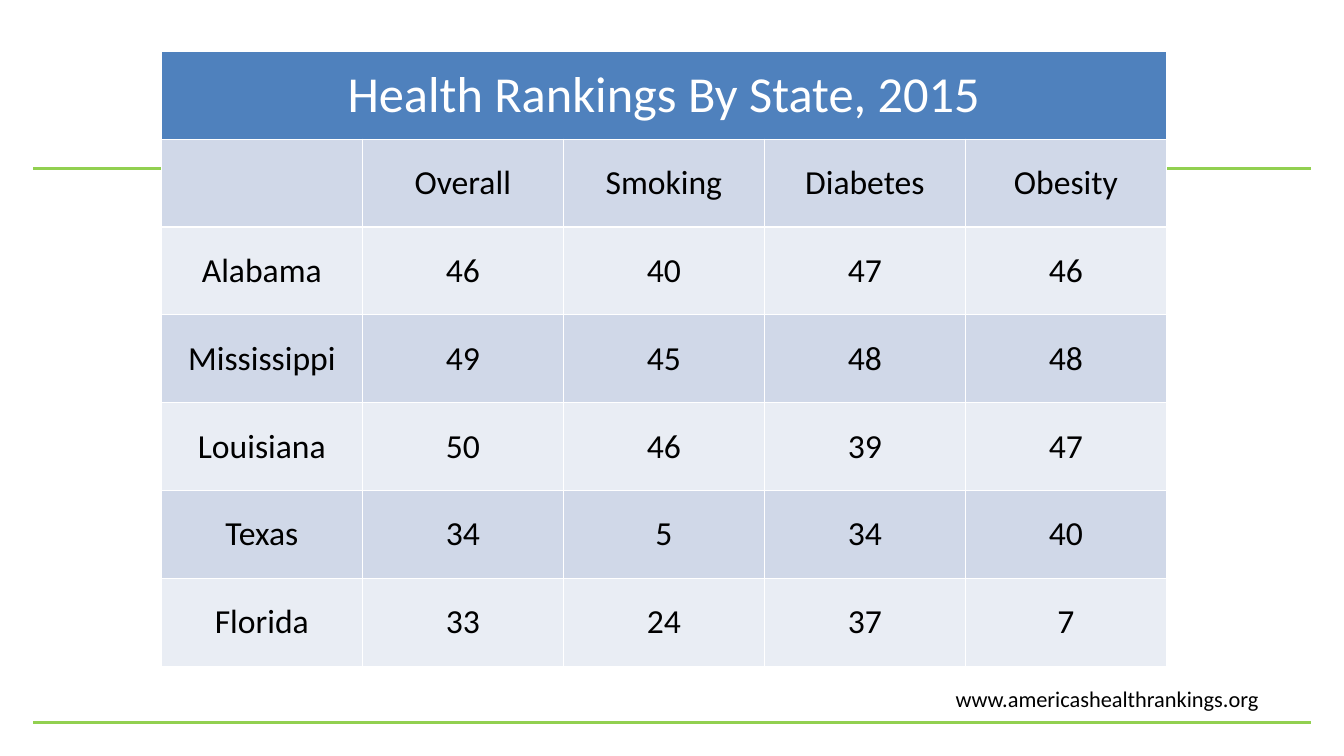
from lxml.etree import SubElement
from pptx import Presentation
from pptx.dml.color import RGBColor
from pptx.enum.shapes import MSO_CONNECTOR
from pptx.enum.text import MSO_ANCHOR, PP_ALIGN
from pptx.oxml.ns import qn
from pptx.util import Inches, Pt

COLORS = {
    "rule": "92D050",
    "title": "4F81BD",
    "dark_band": "D0D8E8",
    "light_band": "E9EDF4",
    "white": "FFFFFF",
    "black": "000000",
}
FONT = "Calibri"
TITLE = "Health Rankings By State, 2015"
RANKINGS = [
    ["", "Overall", "Smoking", "Diabetes", "Obesity"],
    ["Alabama", 46, 40, 47, 46],
    ["Mississippi", 49, 45, 48, 48],
    ["Louisiana", 50, 46, 39, 47],
    ["Texas", 34, 5, 34, 40],
    ["Florida", 33, 24, 37, 7],
]


def rgb(name):
    return RGBColor.from_string(COLORS[name])


def style_text(paragraph, size, color):
    paragraph.font.name = FONT
    paragraph.font.size = Pt(size)
    paragraph.font.color.rgb = rgb(color)


def add_rule(slide, y):
    rule = slide.shapes.add_connector(
        MSO_CONNECTOR.STRAIGHT, Inches(0.33), Inches(y), Inches(13), Inches(y))
    rule.line.color.rgb = rgb("rule")
    rule.line.width = Pt(2.25)
    SubElement(rule._element.spPr, qn("a:effectLst"))


def add_borders(cell):
    properties = cell._tc.get_or_add_tcPr()
    for side in ("a:lnL", "a:lnR", "a:lnT", "a:lnB"):
        border = SubElement(properties, qn(side), w=str(Pt(1)))
        fill = SubElement(border, qn("a:solidFill"))
        SubElement(fill, qn("a:srgbClr"), val=COLORS["white"])


def style_cell(cell, fill, size, color):
    add_borders(cell)
    cell.fill.solid()
    cell.fill.fore_color.rgb = rgb(fill)
    cell.vertical_anchor = MSO_ANCHOR.MIDDLE
    paragraph = cell.text_frame.paragraphs[0]
    paragraph.alignment = PP_ALIGN.CENTER
    style_text(paragraph, size, color)


def add_rankings(slide):
    rows = [[TITLE, "", "", "", ""], *RANKINGS]
    table = slide.shapes.add_table(
        len(rows), len(rows[0]),
        Inches(1.6), Inches(0.51), Inches(9.97), Inches(6.1)).table
    table.cell(0, 0).merge(table.cell(0, len(rows[0]) - 1))
    for r, row in enumerate(rows):
        for c, value in enumerate(row):
            cell = table.cell(r, c)
            cell.text = str(value)
            if r == 0:
                style_cell(cell, "title", 36, "white")
            else:
                band = "dark_band" if r % 2 else "light_band"
                style_cell(cell, band, 24, "black")


def add_source(slide):
    source = slide.shapes.add_textbox(
        Inches(9.38), Inches(6.75), Inches(3.8), Inches(0.37)).text_frame
    source.word_wrap = True
    source.text = "www.americashealthrankings.org"
    style_text(source.paragraphs[0], 16, "black")


def main():
    deck = Presentation()
    deck.slide_width = Inches(13.33)
    deck.slide_height = Inches(7.5)
    slide = deck.slides.add_slide(deck.slide_layouts[6])
    for y in (1.67, 7.17):
        add_rule(slide, y)
    add_rankings(slide)
    add_source(slide)
    deck.save("out.pptx")


if __name__ == "__main__":
    main()
